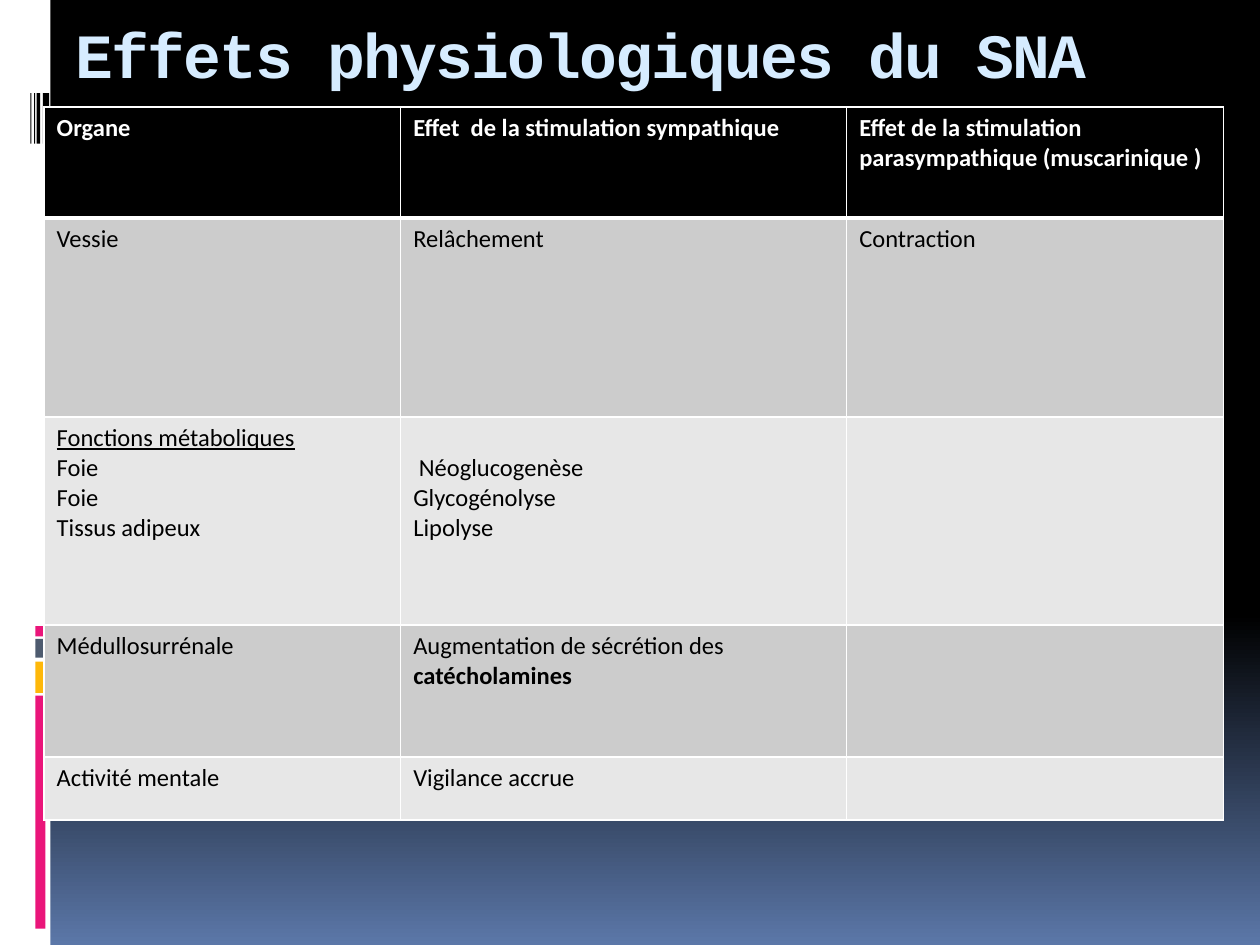
from dataclasses import dataclass

from lxml import etree
from pptx import Presentation
from pptx.dml.color import RGBColor
from pptx.enum.shapes import MSO_SHAPE
from pptx.enum.text import MSO_ANCHOR
from pptx.oxml.ns import qn
from pptx.util import Inches, Pt

RECTANGLE = MSO_SHAPE.RECTANGLE
MIDDLE = MSO_ANCHOR.MIDDLE


@dataclass(frozen=True)
class Theme:
    black: str = "000000"
    white: str = "FFFFFF"
    blue: str = "5B77A8"
    pink: str = "EA157A"
    amber: str = "FEB80A"
    slate: str = "4E5B6F"
    title: str = "D6ECFF"
    bands: tuple = ("CCCCCC", "E7E7E7")
    title_font: str = "Courier New"
    body_font: str = "Calibri"
    title_size: int = 36
    body_size: int = 14
    thin: int = 1
    thick: int = 3


THEME = Theme()

# Left, top, width, height, colour
DECORATION = [
    (0, 0, 0.4, 7.5, THEME.white),
    (0.28, 5.52, 0.08, 1.85, THEME.pink),
    (0.28, 5.25, 0.08, 0.25, THEME.amber),
    (0.28, 5.07, 0.08, 0.15, THEME.slate),
    (0.28, 4.97, 0.08, 0.08, THEME.pink),
] + [
    (left, 0.74, width, 0.4, THEME.black)
    for left, width in ((0.34, 0.05), (0.29, 0.03), (0.27, 0.01), (0.24, 0.01))
]

COLUMN_WIDTHS = (2.83, 3.54, 2.99)
ROW_HEIGHTS = (0.88, 1.58, 1.65, 1.05, 0.5)
ROWS = [
    ("Organe", "Effet  de la stimulation sympathique",
     "Effet de la stimulation parasympathique (muscarinique )"),
    ("Vessie", "Relâchement", "Contraction"),
    ("Fonctions métaboliques\nFoie\nFoie\nTissus adipeux",
     " Néoglucogenèse\nGlycogénolyse\nLipolyse", ""),
    ("Médullosurrénale", "Augmentation de sécrétion des ", ""),
    ("Activité mentale", "Vigilance accrue", ""),
]


def color(value):
    return RGBColor.from_string(value)


def paint_background(page):
    fill = page.background.fill
    fill.gradient()
    fill.gradient_angle = 270
    stops = ((0.65, THEME.black), (1, THEME.blue))
    for stop, (position, value) in zip(fill.gradient_stops, stops):
        stop.position = position
        stop.color.rgb = color(value)


def add_block(page, left, top, width, height, value):
    block = page.shapes.add_shape(
        RECTANGLE, Inches(left), Inches(top), Inches(width), Inches(height))
    block.shadow.inherit = False
    block.fill.solid()
    block.fill.fore_color.rgb = color(value)
    block.line.fill.background()


def style_font(font, name, size, value, bold):
    font.name = name
    font.size = Pt(size)
    font.color.rgb = color(value)
    font.bold = bold


def add_title(page, text):
    box = page.shapes.add_textbox(Inches(0.5), Inches(0.02), Inches(9), Inches(0.81))
    frame = box.text_frame
    frame.word_wrap = True
    frame.vertical_anchor = MIDDLE
    frame.text = text
    span = frame.paragraphs[0].runs[0]
    style_font(span.font, THEME.title_font, THEME.title_size, THEME.title, True)
    span.font._element.set("spc", "-100")


def add_borders(cell, top, bottom):
    properties = cell._tc.get_or_add_tcPr()
    sides = {"lnL": THEME.thin, "lnR": THEME.thin, "lnT": top, "lnB": bottom}
    for side, width in sides.items():
        line = etree.SubElement(properties, qn(f"a:{side}"), w=str(Pt(width)))
        fill = etree.SubElement(line, qn("a:solidFill"))
        etree.SubElement(fill, qn("a:srgbClr"), val=THEME.white)


def add_dash_bullet(para):
    properties = para._p.get_or_add_pPr()
    properties.set("marL", "0")
    properties.set("indent", "0")
    etree.SubElement(properties, qn("a:buChar"), char="-")


def fill_cell(cell, text, row):
    header = row == 0
    add_borders(cell, THEME.thick if row == 1 else THEME.thin,
                THEME.thick if header else THEME.thin)
    cell.fill.solid()
    cell.fill.fore_color.rgb = color(THEME.black if header else THEME.bands[(row - 1) % 2])
    cell.text_frame.text = text
    for para in cell.text_frame.paragraphs:
        style_font(para.font, THEME.body_font, THEME.body_size, THEME.black, header)
        for span in para.runs:
            style_font(span.font, THEME.body_font, THEME.body_size,
                       THEME.white if header else THEME.black, header)


def add_effects_table(page):
    frame = page.shapes.add_table(
        len(ROWS), len(COLUMN_WIDTHS), Inches(0.35), Inches(0.85),
        Inches(sum(COLUMN_WIDTHS)), Inches(sum(ROW_HEIGHTS)))
    table = frame.table
    table.first_row = False
    table.horz_banding = False
    for column, width in zip(table.columns, COLUMN_WIDTHS):
        column.width = Inches(width)
    for line, height in zip(table.rows, ROW_HEIGHTS):
        line.height = Inches(height)

    # Bullet goes in ahead of the font settings
    add_dash_bullet(table.cell(1, 0).text_frame.paragraphs[0])
    for row, texts in enumerate(ROWS):
        for column, text in enumerate(texts):
            fill_cell(table.cell(row, column), text, row)

    # Emphasis, and effects lined up with the organs below the heading
    table.cell(2, 0).text_frame.paragraphs[0].runs[0].font.underline = True
    table.cell(2, 1).margin_top = Inches(0.29)
    span = table.cell(3, 1).text_frame.paragraphs[0].add_run()
    span.text = "catécholamines"
    style_font(span.font, THEME.body_font, THEME.body_size, THEME.black, True)


def main():
    deck = Presentation()
    deck.slide_width, deck.slide_height = Inches(10), Inches(7.5)
    page = deck.slides.add_slide(deck.slide_layouts[6])
    paint_background(page)
    for block in DECORATION:
        add_block(page, *block)
    add_title(page, "Effets physiologiques du SNA")
    add_effects_table(page)
    deck.save("out.pptx")


if __name__ == "__main__":
    main()
